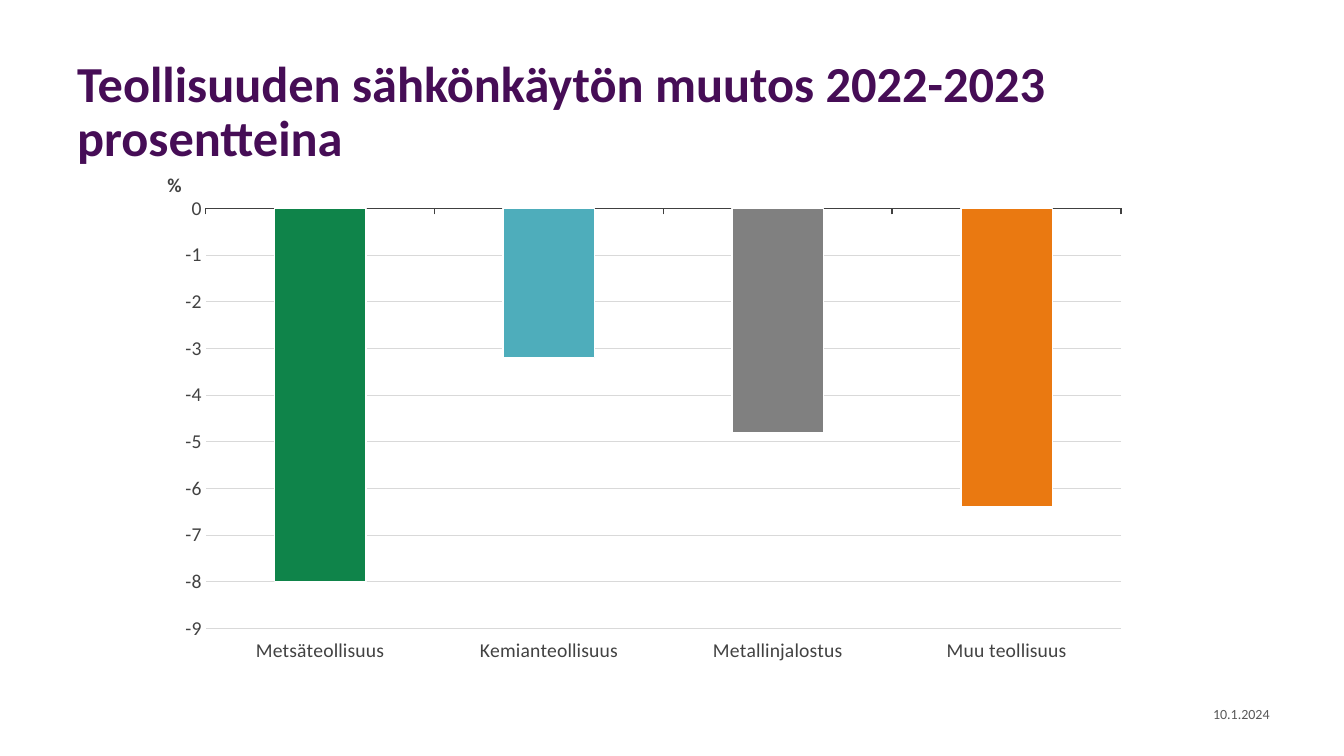
from lxml.etree import SubElement
from pptx import Presentation
from pptx.chart.data import CategoryChartData
from pptx.dml.color import RGBColor
from pptx.enum.chart import XL_CHART_TYPE as ChartType, XL_TICK_LABEL_POSITION as LabelPosition, XL_TICK_MARK as TickMark
from pptx.enum.text import MSO_ANCHOR as Anchor, PP_ALIGN as Align
from pptx.oxml.ns import qn
from pptx.util import Inches, Pt


def color(value):
    return RGBColor.from_string(value)


class SlideBuilder:
    """Holds the style and the current slide and adds elements to it."""

    font_name = "Calibri"
    purple, gray, label_gray = "460D56", "595959", "424242"
    axis_gray, grid_gray, white = "404040", "D9D9D9", "FFFFFF"

    def __init__(self, deck):
        self.deck = deck
        self.slide = deck.slides.add_slide(deck.slide_layouts[6])

    def frame(self, left, top, width, height):
        across, down = self.deck.slide_width, self.deck.slide_height
        return [round(share * size) for share, size in
                zip((left, top, width, height), (across, down, across, down))]

    def style(self, font, size, hex_color, bold=False):
        values = {"name": self.font_name, "size": Pt(size), "bold": bold}
        for name, value in values.items():
            setattr(font, name, value)
        font.color.rgb = color(hex_color)

    def line(self, line_format, hex_color, width):
        line_format.color.rgb = color(hex_color)
        line_format.width = Pt(width)

    def text(self, words, area, size, hex_color, bold=False, **paragraph_format):
        box = self.slide.shapes.add_textbox(*self.frame(*area))
        box.text_frame.word_wrap = True
        box.text_frame.vertical_anchor = Anchor.MIDDLE
        para = box.text_frame.paragraphs[0]
        for name, value in paragraph_format.items():
            setattr(para, name, value)
        span = para.add_run()
        span.text = words
        self.style(span.font, size, hex_color, bold)

    def layout(self, parent, index, **values):
        for old in parent.findall(qn("c:layout")):
            parent.remove(old)
        layout = SubElement(parent, qn("c:layout"))
        parent.insert(index, layout)
        manual = SubElement(layout, qn("c:manualLayout"))
        for name, value in values.items():
            SubElement(manual, qn(f"c:{name}")).set("val", str(value))

    def column_chart(self, columns, area, unit):
        data = CategoryChartData(number_format="General")
        data.categories = [name for name, _, _ in columns]
        data.add_series("Series 1", [value for _, value, _ in columns])
        chart = self.slide.shapes.add_chart(
            ChartType.COLUMN_CLUSTERED, *self.frame(*area), data).chart
        chart.has_title = chart.has_legend = False
        self.style(chart.font, 10, "000000")
        self.layout(chart.element.xpath("//c:plotArea")[0], 0, layoutTarget="inner",
                    xMode="edge", yMode="edge", x=0.062, y=0.091, w=0.918, h=0.833)
        self.columns(chart.plots[0], columns)
        self.axes(chart.category_axis, chart.value_axis, unit)

    def columns(self, plot, columns):
        plot.gap_width = 150
        plot.vary_by_categories = False
        series = plot.series[0]
        series.invert_if_negative = False
        for index, (_, _, fill) in enumerate(columns):
            point = series.points[index].format
            point.fill.solid()
            point.fill.fore_color.rgb = color(fill)
            self.line(point.line, self.white, 1)

    def axes(self, category_axis, value_axis, unit):
        for axis in (category_axis, value_axis):
            self.style(axis.tick_labels.font, 14, self.label_gray)
            axis.minor_tick_mark = TickMark.NONE
        category_axis.tick_label_position = LabelPosition.LOW
        category_axis.major_tick_mark = TickMark.OUTSIDE
        self.line(category_axis.format.line, self.axis_gray, 1)

        scale = {"minimum_scale": -9, "maximum_scale": 0, "major_unit": 1,
                 "major_tick_mark": TickMark.NONE, "has_major_gridlines": True}
        for name, value in scale.items():
            setattr(value_axis, name, value)
        value_axis.format.line.fill.background()
        self.line(value_axis.major_gridlines.format.line, self.grid_gray, 0.5)

        title = value_axis.axis_title
        title.text_frame.text = unit
        self.style(title.text_frame.paragraphs[0].runs[0].font, 14, self.label_gray, True)
        element = value_axis.axis_title.format.element if hasattr(
            title.format, "element") else title.element
        body = element.xpath(".//a:bodyPr")[0]
        body.set("rot", "0")
        body.set("vert", "horz")
        self.layout(element, 1, xMode="edge", yMode="edge", x=0.02, y=0.01)


def main():
    deck = Presentation()
    deck.slide_width, deck.slide_height = Inches(13.33), Inches(7.5)
    page = SlideBuilder(deck)
    page.text("Teollisuuden sähkönkäytön muutos 2022-2023 prosentteina",
              (0.05, 0.053, 0.778, 0.193), 36, page.purple, True, line_spacing=0.9)
    page.text("10.1.2024", (0.869, 0.927, 0.083, 0.036), 10, page.gray,
              alignment=Align.RIGHT, space_after=Pt(6))
    page.column_chart([
        ("Metsäteollisuus", -8, "0F844A"),
        ("Kemianteollisuus", -3.2, "4EADBB"),
        ("Metallinjalostus", -4.8, "808080"),
        ("Muu teollisuus", -6.4, "EA7911"),
    ], (0.107, 0.215, 0.742, 0.667), "%")
    deck.save("out.pptx")


if __name__ == "__main__":
    main()
